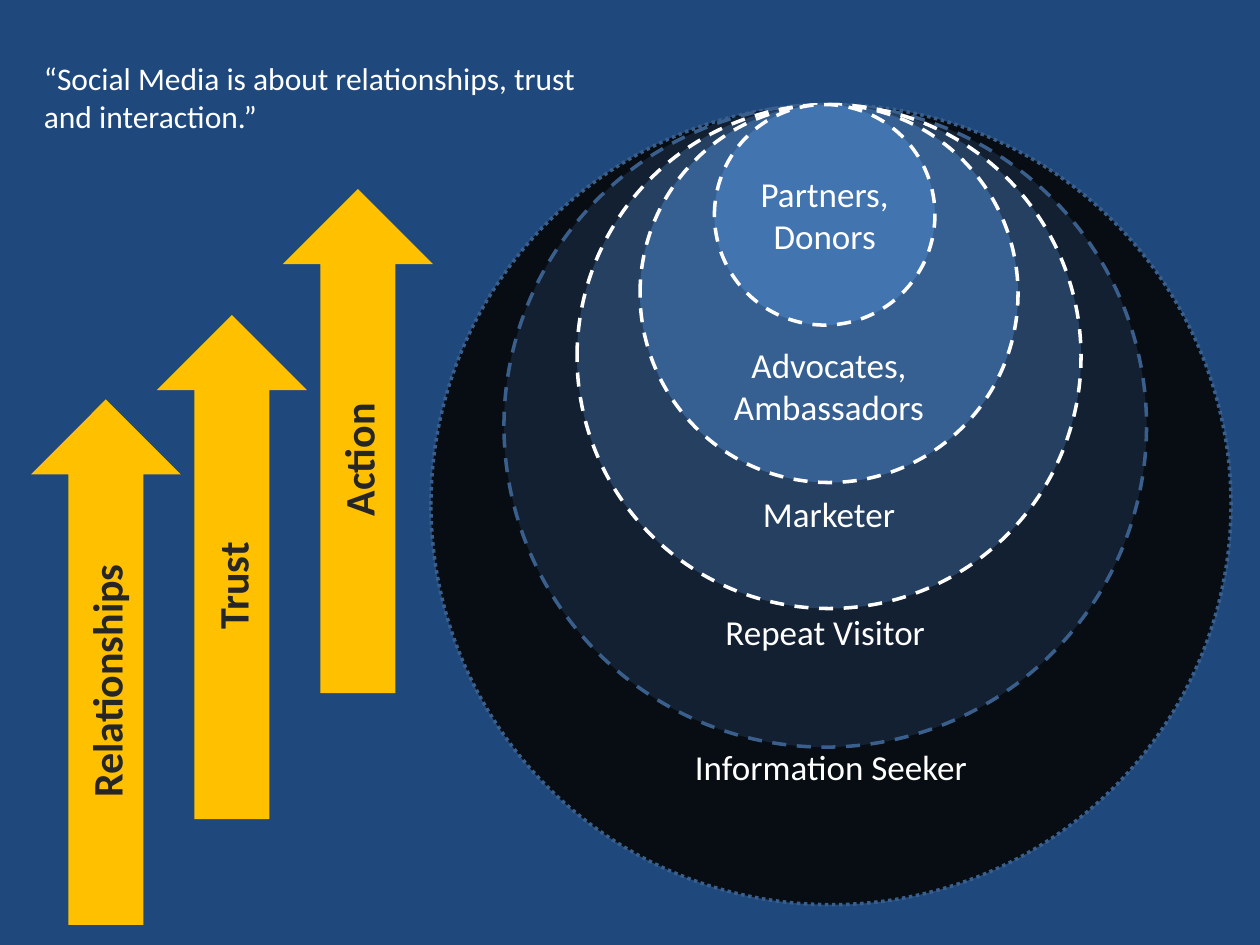
from dataclasses import dataclass

from pptx import Presentation
from pptx.dml.color import RGBColor
from pptx.enum.dml import MSO_LINE
from pptx.enum.shapes import MSO_SHAPE
from pptx.enum.text import MSO_ANCHOR, PP_ALIGN
from pptx.util import Inches, Pt

ARROW, ELLIPSE = MSO_SHAPE.RIGHT_ARROW, MSO_SHAPE.OVAL
DASH, DOTS = MSO_LINE.DASH, MSO_LINE.ROUND_DOT
LEFT, CENTER = PP_ALIGN.LEFT, PP_ALIGN.CENTER
TOP, MIDDLE, BOTTOM = MSO_ANCHOR.TOP, MSO_ANCHOR.MIDDLE, MSO_ANCHOR.BOTTOM


@dataclass(frozen=True)
class Theme:
    font: str = "Calibri"
    background: str = "1F497D"
    arrow: str = "FFC000"
    dark_text: str = "262626"
    white: str = "FFFFFF"
    muted_outline: str = "3A5F8C"
    quote_size: int = 18
    circle_size: int = 20
    arrow_size: int = 24
    outline_width: int = 2


THEME = Theme()


@dataclass(frozen=True)
class Stage:
    label: str
    center_x: float
    top: float
    length: float


@dataclass(frozen=True)
class Circle:
    label: str
    left: float
    diameter: float
    fill: str
    outline: str = THEME.white
    dash: MSO_LINE = DASH
    anchor: MSO_ANCHOR = BOTTOM
    inset: float = 0


ARROW_WIDTH = 1.19
CIRCLES_TOP = 0.83

STAGES = [
    Stage("Relationships", 0.84, 3.17, 4.17),
    Stage("Trust", 1.84, 2.5, 4),
    Stage("Action", 2.84, 1.5, 4),
]
CIRCLES = [
    Circle("Information Seeker", 3.42, 6.35, "070D13", THEME.muted_outline, DOTS),
    Circle("Repeat Visitor", 4, 5.1, "122031", THEME.muted_outline),
    Circle("Marketer", 4.58, 4, "254061"),
    Circle("Advocates, Ambassadors", 5.08, 3, "376092"),
    Circle("Partners, Donors", 5.67, 1.75, "4274AF", anchor=MIDDLE, inset=0.1),
]


def color(code: str) -> RGBColor:
    return RGBColor.from_string(code)


def write(shape, text: str, *, size: int, ink: str = THEME.white, bold: bool = False,
          align: PP_ALIGN = CENTER, anchor: MSO_ANCHOR = MIDDLE) -> None:
    frame = shape.text_frame
    frame.word_wrap = True
    frame.vertical_anchor = anchor
    paragraph = frame.paragraphs[0]
    paragraph.alignment = align
    run = paragraph.add_run()
    run.text = text
    run.font.name = THEME.font
    run.font.size = Pt(size)
    run.font.bold = bold
    run.font.color.rgb = color(ink)


def add_filled(shapes, preset: MSO_SHAPE, left: float, top: float,
               width: float, height: float, fill: str):
    shape = shapes.add_shape(preset, Inches(left), Inches(top), Inches(width), Inches(height))
    shape.shadow.inherit = False
    shape.fill.solid()
    shape.fill.fore_color.rgb = color(fill)
    return shape


def draw_stage(shapes, stage: Stage) -> None:
    """Draw a right arrow turned about its centre so that it points up."""
    left = stage.center_x - stage.length / 2
    top = stage.top + (stage.length - ARROW_WIDTH) / 2
    arrow = add_filled(shapes, ARROW, left, top, stage.length, ARROW_WIDTH, THEME.arrow)
    arrow.rotation = 270
    arrow.line.fill.background()
    write(arrow, stage.label, size=THEME.arrow_size, ink=THEME.dark_text, bold=True)


def draw_circle(shapes, circle: Circle) -> None:
    disc = add_filled(shapes, ELLIPSE, circle.left, CIRCLES_TOP,
                      circle.diameter, circle.diameter, circle.fill)
    disc.line.color.rgb = color(circle.outline)
    disc.line.width = Pt(THEME.outline_width)
    disc.line.dash_style = circle.dash
    frame = disc.text_frame
    frame.margin_left = frame.margin_right = Inches(circle.inset)
    frame.margin_top = frame.margin_bottom = Inches(circle.inset / 2)
    write(disc, circle.label, size=THEME.circle_size, anchor=circle.anchor)


def main() -> None:
    deck = Presentation()
    deck.slide_width, deck.slide_height = Inches(10), Inches(7.5)
    slide = deck.slides.add_slide(deck.slide_layouts[6])
    slide.background.fill.solid()
    slide.background.fill.fore_color.rgb = color(THEME.background)

    for stage in STAGES:
        draw_stage(slide.shapes, stage)

    audience = slide.shapes.add_group_shape()
    for circle in CIRCLES:
        draw_circle(audience.shapes, circle)

    quote = slide.shapes.add_textbox(Inches(0.25), Inches(0.42), Inches(4.42), Inches(0.71))
    write(quote, "“Social Media is about relationships, trust and interaction.”",
          size=THEME.quote_size, align=LEFT, anchor=TOP)

    deck.save("out.pptx")


if __name__ == "__main__":
    main()
